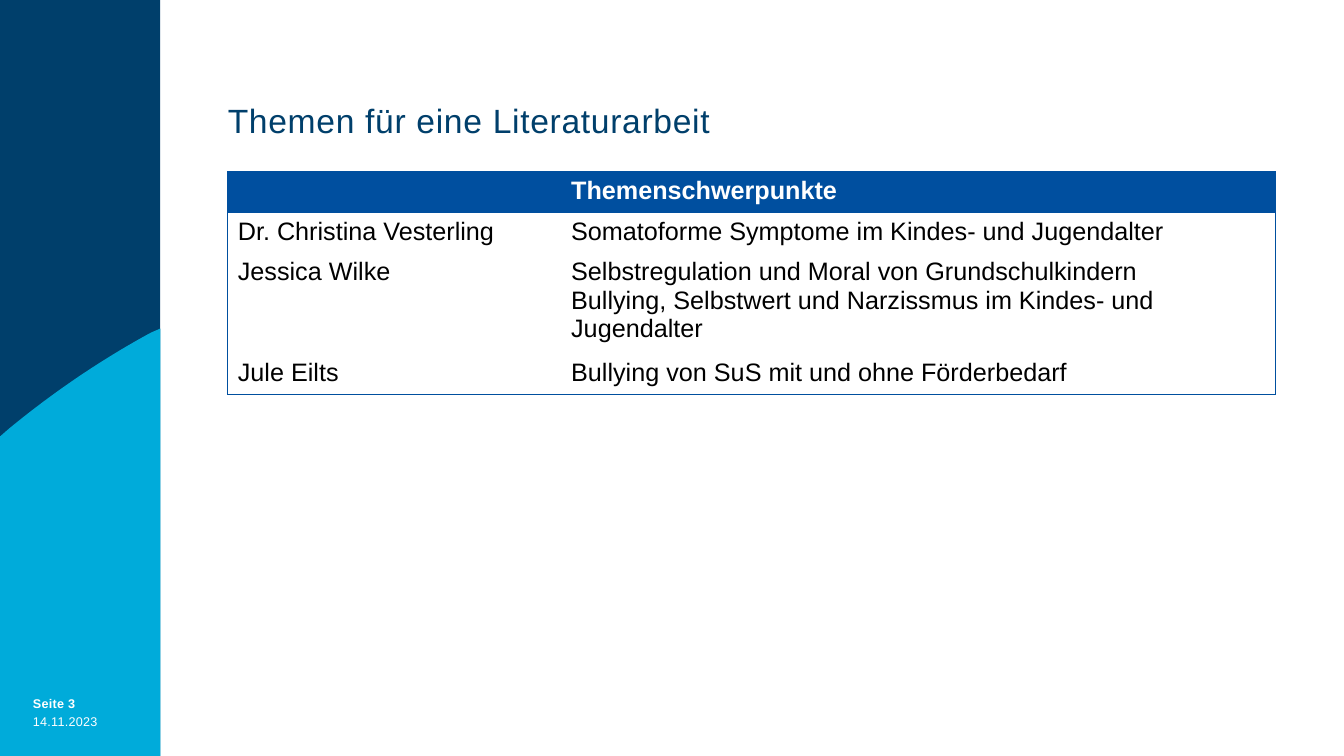
from lxml import etree
from pptx import Presentation
from pptx.dml.color import RGBColor
from pptx.enum.shapes import MSO_SHAPE
from pptx.enum.text import MSO_ANCHOR, PP_ALIGN
from pptx.oxml.ns import qn
from pptx.util import Cm, Pt

RECT = MSO_SHAPE.RECTANGLE
TOP = MSO_ANCHOR.TOP
LEFT = PP_ALIGN.LEFT

NAVY = RGBColor(0x00, 0x3F, 0x6B)
CYAN = RGBColor(0x00, 0xAB, 0xDA)
BLUE = RGBColor(0x00, 0x4F, 0x9F)
WHITE = RGBColor(0xFF, 0xFF, 0xFF)
BLACK = RGBColor(0x00, 0x00, 0x00)

FONT = "Arial"
BAND = 4.04  # width of the side band in cm
HIGH = 19.05  # slide height in cm
EDGE = 2.26 * 2.54  # left edge of title and table in cm

ROWS = [
    ("", "Themenschwerpunkte"),
    ("Dr. Christina Vesterling",
     "Somatoforme Symptome im Kindes- und Jugendalter"),
    ("Jessica Wilke",
     "Selbstregulation und Moral von Grundschulkindern\n"
     "Bullying, Selbstwert und Narzissmus im Kindes- und Jugendalter"),
    ("Jule Eilts", "Bullying von SuS mit und ohne Förderbedarf"),
]
WIDTHS = (8.4, 18.0)
HEIGHTS = (1.04, 0.97, 2.4, 0.97)


def style(frame, size, color, bold=False, track=0, lead=None):
    """Format all text of a frame; track is letter spacing in points."""
    for para in frame.paragraphs:
        para.alignment = LEFT
        if lead:
            para.line_spacing = lead
        for run in para.runs:
            font = run.font
            font.name, font.size, font.bold = FONT, Pt(size), bold
            font.color.rgb = color
            if track:
                run._r.get_or_add_rPr().set("spc", str(round(track * 100)))


def clear(frame):
    """Remove the insets and start the text at the top."""
    frame.margin_left = frame.margin_right = 0
    frame.margin_top = frame.margin_bottom = 0
    frame.vertical_anchor = TOP
    frame.word_wrap = True


def paint(shape, color):
    shape.shadow.inherit = False
    shape.fill.solid()
    shape.fill.fore_color.rgb = color
    shape.line.fill.background()


def bezier(nodes, steps=24):
    """Points on a cubic curve given by its four nodes."""
    for step in range(steps + 1):
        t = step / steps
        parts = ((1 - t) ** 3, 3 * t * (1 - t) ** 2, 3 * t * t * (1 - t), t ** 3)
        yield tuple(sum(p * n[axis] for p, n in zip(parts, nodes))
                    for axis in (0, 1))


def add_band(slide):
    paint(slide.shapes.add_shape(RECT, 0, 0, Cm(BAND), Cm(HIGH)), NAVY)
    arc = bezier([(0.23, 10.8), (1.35, 9.88), (2.54, 9.07), (3.81, 8.38)])
    points = [(BAND, HIGH), (0, HIGH), (0, 11.0), *arc]
    form = slide.shapes.build_freeform(Cm(BAND), Cm(8.28))
    form.add_line_segments([(Cm(x), Cm(y)) for x, y in points], close=True)
    paint(form.convert_to_shape(), CYAN)


def add_label(slide, text, top, bold):
    box = slide.shapes.add_textbox(Cm(0.83), Cm(top), Cm(2.9), Cm(0.44))
    frame = box.text_frame
    clear(frame)
    frame.text = text
    style(frame, 9, WHITE, bold, 0.2, Pt(12))


def set_title(slide, text):
    title = slide.shapes.title
    title.left, title.top = Cm(EDGE), Cm(2.62)
    title.width, title.height = Cm(23.9), Cm(1.22)
    frame = title.text_frame
    clear(frame)
    frame.text = text
    style(frame, 24, NAVY, track=0.5, lead=0.9)


def set_edges(cell, edges):
    """Draw the named cell edges and hide the others."""
    props = cell._tc.get_or_add_tcPr()
    for side in "LRTB":
        line = etree.SubElement(props, qn("a:ln" + side), w=str(Pt(0.5)))
        if side in edges:
            fill = etree.SubElement(line, qn("a:solidFill"))
            etree.SubElement(fill, qn("a:srgbClr"), val=str(BLUE))
        else:
            etree.SubElement(line, qn("a:noFill"))


def add_topics(slide):
    table = slide.shapes.add_table(
        len(ROWS), len(WIDTHS), Cm(EDGE), Cm(4.32),
        Cm(sum(WIDTHS)), Cm(sum(HEIGHTS))).table
    table.horz_banding = False
    for column, width in zip(table.columns, WIDTHS):
        column.width = Cm(width)
    last = len(ROWS) - 1
    for r, (row, height) in enumerate(zip(ROWS, HEIGHTS)):
        table.rows[r].height = Cm(height)
        head = r == 0
        ends = ("T" if head else "") + ("B" if r == last else "")
        for c, text in enumerate(row):
            cell = table.cell(r, c)
            set_edges(cell, ends + "LR"[c])
            cell.fill.solid()
            cell.fill.fore_color.rgb = BLUE if head else WHITE
            cell.text_frame.text = text
            style(cell.text_frame, 18, WHITE if head else BLACK, head)


def main():
    deck = Presentation()
    deck.slide_width, deck.slide_height = Cm(33.87), Cm(HIGH)
    slide = deck.slides.add_slide(deck.slide_layouts[5])
    add_band(slide)
    add_label(slide, "Seite 3", 17.5, True)
    add_label(slide, "14.11.2023", 17.94, False)
    set_title(slide, "Themen für eine Literaturarbeit")
    add_topics(slide)
    deck.save("out.pptx")


if __name__ == "__main__":
    main()
